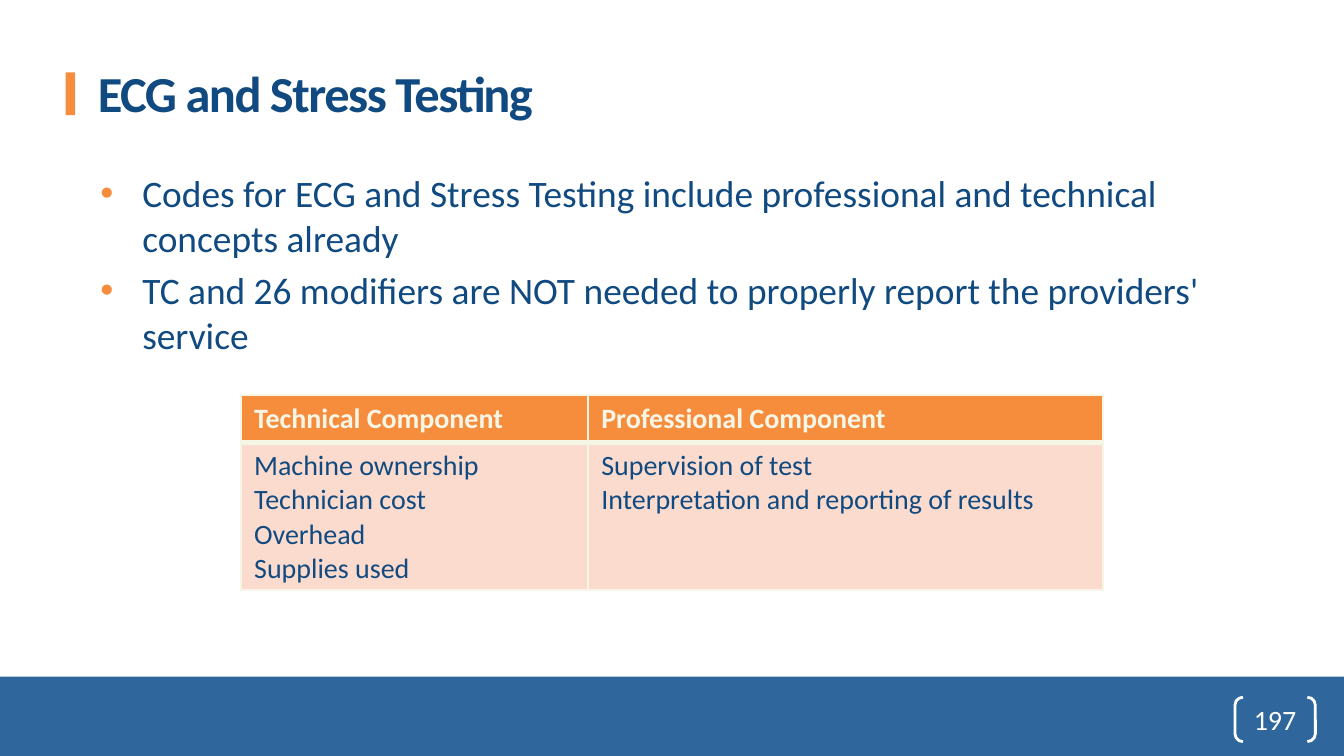
from lxml import etree
from pptx import Presentation
from pptx import util as u
from pptx.dml.color import RGBColor
from pptx.enum import shapes, text
from pptx.oxml.ns import qn

NAVY = RGBColor(0x10, 0x4A, 0x80)
BLUE = RGBColor(0x2F, 0x67, 0x9C)
ORANGE = RGBColor(0xF6, 0x8D, 0x3D)
PEACH = RGBColor(0xFB, 0xDB, 0xCE)
CREAM = RGBColor(0xF6, 0xF6, 0xE7)
WHITE = RGBColor(0xFF, 0xFF, 0xFF)


def style(paragraph, size, color, bold=False):
    font = paragraph.font
    font.name, font.size, font.bold = "Calibri", u.Pt(size), bold
    font.color.rgb = color


def add_color(parent, color):
    fill = etree.SubElement(parent, qn("a:solidFill"))
    etree.SubElement(fill, qn("a:srgbClr"), val=str(color))


prs = Presentation()
prs.slide_width, prs.slide_height = u.Cm(25.4), u.Cm(14.29)
slide = prs.slides.add_slide(prs.slide_layouts[6])

for left, top, width, height, color in [
    (0, 12.79, 25.4, 1.5, BLUE),
    (1.24, 1.37, 0.18, 0.81, ORANGE),
]:
    bar = slide.shapes.add_shape(
        shapes.MSO_SHAPE.RECTANGLE, u.Cm(left), u.Cm(top), u.Cm(width), u.Cm(height))
    bar.shadow.inherit = False
    bar.fill.solid()
    bar.fill.fore_color.rgb = color
    bar.line.fill.background()

points = slide.shapes.add_textbox(u.Cm(1.42), u.Cm(3.12), u.Cm(22.58), u.Cm(9.3)).text_frame
points.word_wrap = True
points.margin_left = points.margin_right = u.Cm(0.2)
points.margin_top = points.margin_bottom = u.Cm(0.1)
points.text = (
    "Codes for ECG and Stress Testing include professional and technical concepts already\n"
    "TC and 26 modifiers are NOT needed to properly report the providers' service")
for number, point in enumerate(points.paragraphs):
    properties = point._p.get_or_add_pPr()
    properties.set("marL", str(u.Cm(1.07)))
    properties.set("indent", str(u.Cm(-0.79)))
    bullet_color = etree.SubElement(properties, qn("a:buClr"))
    etree.SubElement(bullet_color, qn("a:srgbClr"), val=str(ORANGE))
    etree.SubElement(properties, qn("a:buFont"), typeface="Arial")
    etree.SubElement(properties, qn("a:buChar"), char="•")
    if number:
        point.space_before = u.Pt(4)
    style(point, 20, NAVY)

title = slide.shapes.add_textbox(u.Cm(1.42), u.Cm(0.58), u.Cm(22.56), u.Cm(2.34)).text_frame
title.word_wrap = True
title.vertical_anchor = text.MSO_ANCHOR.MIDDLE
title.margin_left, title.margin_right = u.Cm(0.43), u.Cm(0.2)
title.margin_top = title.margin_bottom = u.Cm(0.1)
title.text = "ECG and Stress Testing"
heading = title.paragraphs[0]
style(heading, 27, NAVY, True)
heading.runs[0]._r.get_or_add_rPr().set("spc", "-80")

page = slide.shapes.add_shape(
    shapes.MSO_SHAPE.DOUBLE_BRACKET, u.Cm(23.34), u.Cm(13.18), u.Cm(1.52), u.Cm(0.84))
page.shadow.inherit = False
page.adjustments[0] = 0.18
page.fill.background()
page.line.color.rgb = WHITE
page.line.width = u.Pt(1.5)
page_text = page.text_frame
page_text.margin_left = page_text.margin_right = 0
page_text.margin_top = page_text.margin_bottom = 0
page_text.vertical_anchor = text.MSO_ANCHOR.MIDDLE
page_text.text = "197"
page_text.paragraphs[0].alignment = text.PP_ALIGN.CENTER
style(page_text.paragraphs[0], 15, WHITE)

components = [
    ["Technical Component", "Professional Component"],
    ["Machine ownership\nTechnician cost\nOverhead\nSupplies used",
     "Supervision of test\nInterpretation and reporting of results"],
]
table = slide.shapes.add_table(2, 2, u.Cm(4.55), u.Cm(7.47), u.Cm(16.29), u.Cm(3.51)).table
for column, width in zip(table.columns, (6.56, 9.73)):
    column.width = u.Cm(width)
for row, height in zip(table.rows, (0.89, 2.62)):
    row.height = u.Cm(height)

row_styles = [
    (ORANGE, CREAM, True, {"L": 1, "R": 1, "T": 1, "B": 3}),
    (PEACH, NAVY, False, {"L": 1, "R": 1, "T": 3, "B": 1}),
]
for row, wordings, (fill, color, bold, borders) in zip(table.rows, components, row_styles):
    for cell, wording in zip(row.cells, wordings):
        cell.text = wording
        for line in cell.text_frame.paragraphs:
            style(line, 15, color, bold)
        cell_properties = cell._tc.get_or_add_tcPr()
        for side, weight in borders.items():
            border = etree.SubElement(cell_properties, qn("a:ln" + side), w=str(u.Pt(weight)))
            add_color(border, CREAM)
        cell.fill.solid()
        cell.fill.fore_color.rgb = fill

prs.save("out.pptx")
